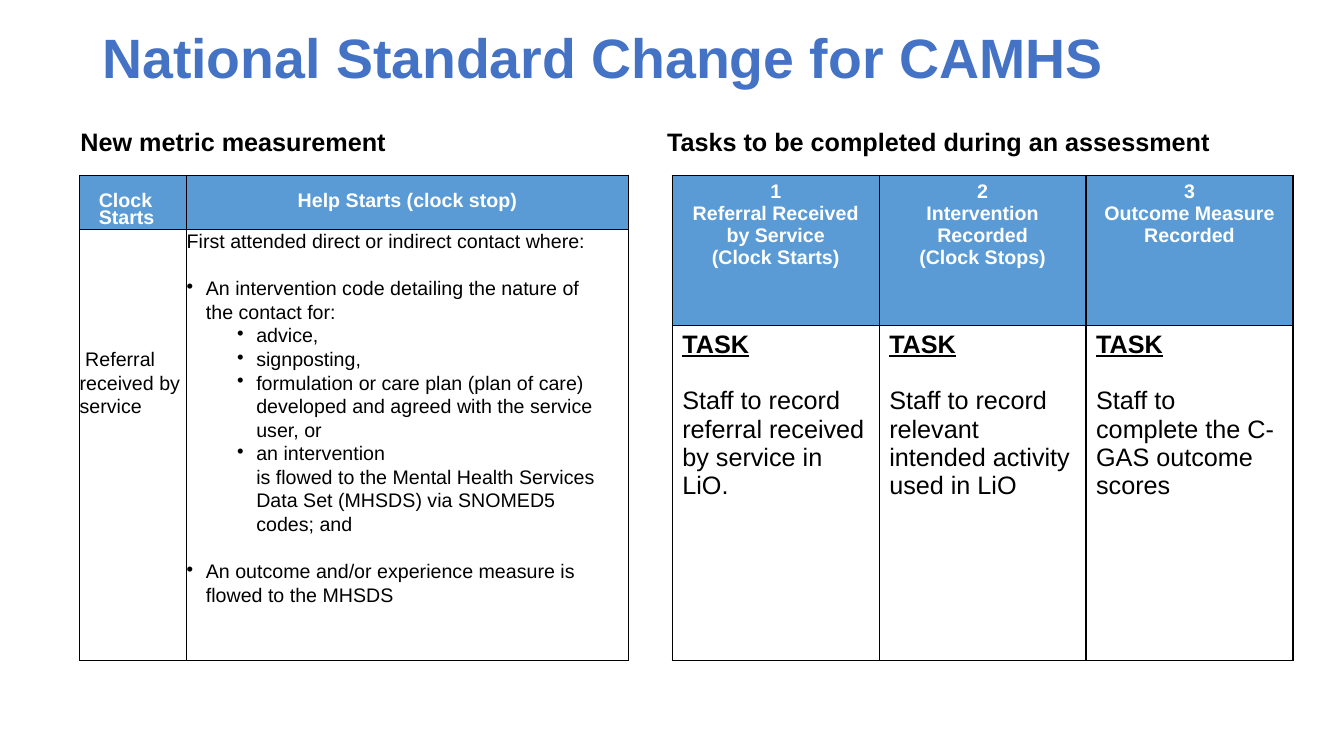
from lxml.etree import SubElement
from pptx import Presentation
from pptx.dml.color import RGBColor
from pptx.enum.text import MSO_ANCHOR, PP_ALIGN
from pptx.oxml.ns import qn
from pptx.util import Pt

LABELS = [
    ("title", "National Standard Change for CAMHS", (66, 18, 828, 48)),
    ("label", "New metric measurement", (50.4, 86.4, 313, 29)),
    ("inset", "Tasks to be completed during an assessment", (464.4, 86.4, 480, 29)),
]

METRIC = [
    [[("start", "Clock Starts")], [("stop", "Help Starts (clock stop)")]],
    [
        [("refer", "Referral received by service")],
        [
            ("lead", "First attended direct or indirect contact where:"),
            ("point", "An intervention code detailing the nature of the contact for:"),
            ("sub", "advice,"),
            ("sub", "signposting,"),
            ("sub", "formulation or care plan (plan of care) developed and agreed "
                    "with the service user, or"),
            ("sub", "an intervention"),
            ("flow", "is flowed to the Mental Health Services Data Set (MHSDS) "
                     "via SNOMED5 codes; and"),
            ("point", "An outcome and/or experience measure is flowed to the MHSDS"),
        ],
    ],
]

STEPS = [
    (["1", "Referral Received by Service", "(Clock Starts)"],
     "Staff to record referral received by service in LiO."),
    (["2", "Intervention Recorded", "(Clock Stops)"],
     "Staff to record relevant intended activity used in LiO"),
    (["3", "Outcome Measure Recorded"],
     "Staff to complete the C-GAS outcome scores"),
]

THEME = {
    "face": "Arial",
    "blue": RGBColor(0x44, 0x72, 0xC4),
    "head": RGBColor(0x5B, 0x9B, 0xD5),
    "white": RGBColor(255, 255, 255),
    "black": RGBColor(0, 0, 0),
    "line": "000000",
    "title": Pt(39.6),
    "large": Pt(18),
    "small": Pt(14),
}

BODY = {"size": THEME["small"], "bold": False}
HEAD = {"size": THEME["small"], "bold": True, "color": THEME["white"]}
LARGE = {"size": THEME["large"], "bold": True}
MID = {"alignment": PP_ALIGN.CENTER}
TIGHT = {"line_spacing": Pt(12.8)}
LOOSE = {"line_spacing": 1.07}

STYLES = {
    "title": ({"size": THEME["title"], "bold": True, "color": THEME["blue"]},
              {"line_spacing": 0.9}, (0, 0, "")),
    "label": (LARGE, {}, (0, 0, "")),
    "inset": (LARGE, {}, (5, 0, "")),
    "start": (HEAD, TIGHT, (13.7, 0, "")),
    "stop": (HEAD, TIGHT | MID, (0, 0, "")),
    "refer": (BODY, LOOSE, (0, 4, "")),
    "lead": (BODY, LOOSE | {"space_after": Pt(17)}, (0, 0, "")),
    "point": (BODY, LOOSE, (13.7, -13.7, "•")),
    "sub": (BODY, LOOSE, (49.7, -13.7, "•")),
    "flow": (BODY, LOOSE | {"space_after": Pt(17)}, (49.7, 0, "")),
    "step": (HEAD, MID, (0, 0, "")),
    "task": (LARGE | {"underline": True}, {"space_after": Pt(20.5)}, (0, 0, "")),
    "note": (LARGE | {"bold": False}, {}, (0, 0, "")),
}

FLUSH = {"margin_left": 0, "margin_right": 0, "margin_top": 0, "margin_bottom": 0}
PADS = {
    "start": FLUSH | {"margin_top": Pt(12.8)},
    "stop": FLUSH | {"margin_top": Pt(12.8)},
    "refer": FLUSH | {"margin_top": Pt(84.5)},
    "lead": FLUSH | {"margin_right": Pt(18)},
}


def apply(item, props):
    for name, value in props.items():
        setattr(item, name, value)


def write(frame, lines):
    for i, (kind, text) in enumerate(lines):
        para = frame.add_paragraph() if i else frame.paragraphs[0]
        look, space, (left, first, mark) = STYLES[kind]
        run = para.add_run()
        run.text = text
        font = {"name": THEME["face"], "color": THEME["black"]} | look
        run.font.color.rgb = font.pop("color")
        apply(run.font, font)
        apply(para, space)
        props = para._p.get_or_add_pPr()
        props.set("marL", str(int(Pt(left))))
        props.set("indent", str(int(Pt(first))))
        if mark:
            SubElement(props, qn("a:buChar"), char=mark)


def edge(cell):
    props = cell._tc.get_or_add_tcPr()
    for side in ("lnL", "lnR", "lnT", "lnB"):
        line = SubElement(props, qn(f"a:{side}"), w=str(int(Pt(1))))
        fill = SubElement(line, qn("a:solidFill"))
        SubElement(fill, qn("a:srgbClr"), val=THEME["line"])


def grid(slide, left, top, cols, rows, data):
    box = map(Pt, (left, top, sum(cols), sum(rows)))
    table = slide.shapes.add_table(len(rows), len(cols), *box).table
    apply(table, {"first_row": False, "horz_banding": False})
    for col, width in zip(table.columns, cols):
        col.width = Pt(width)
    for r, (row, height) in enumerate(zip(table.rows, rows)):
        row.height = Pt(height)
        for cell, lines in zip(row.cells, data[r]):
            edge(cell)
            if r == 0:
                cell.fill.solid()
                cell.fill.fore_color.rgb = THEME["head"]
            else:
                cell.fill.background()
            apply(cell, {"vertical_anchor": MSO_ANCHOR.TOP} | PADS.get(lines[0][0], {}))
            write(cell.text_frame, lines)


def main():
    deck = Presentation()
    apply(deck, {"slide_width": Pt(960), "slide_height": Pt(540)})
    slide = deck.slides.add_slide(deck.slide_layouts[6])
    for kind, text, box in LABELS:
        frame = slide.shapes.add_textbox(*map(Pt, box)).text_frame
        frame.word_wrap = True
        write(frame, [(kind, text)])
    tasks = [
        [[("step", line) for line in head] for head, note in STEPS],
        [[("task", "TASK"), ("note", note)] for head, note in STEPS],
    ]
    grid(slide, 56.9, 125.3, [76.5, 315.4], [37.5, 308], METRIC)
    grid(slide, 480.2, 125.3, [147.8] * len(STEPS), [107, 239.5], tasks)
    deck.save("out.pptx")


if __name__ == "__main__":
    main()
